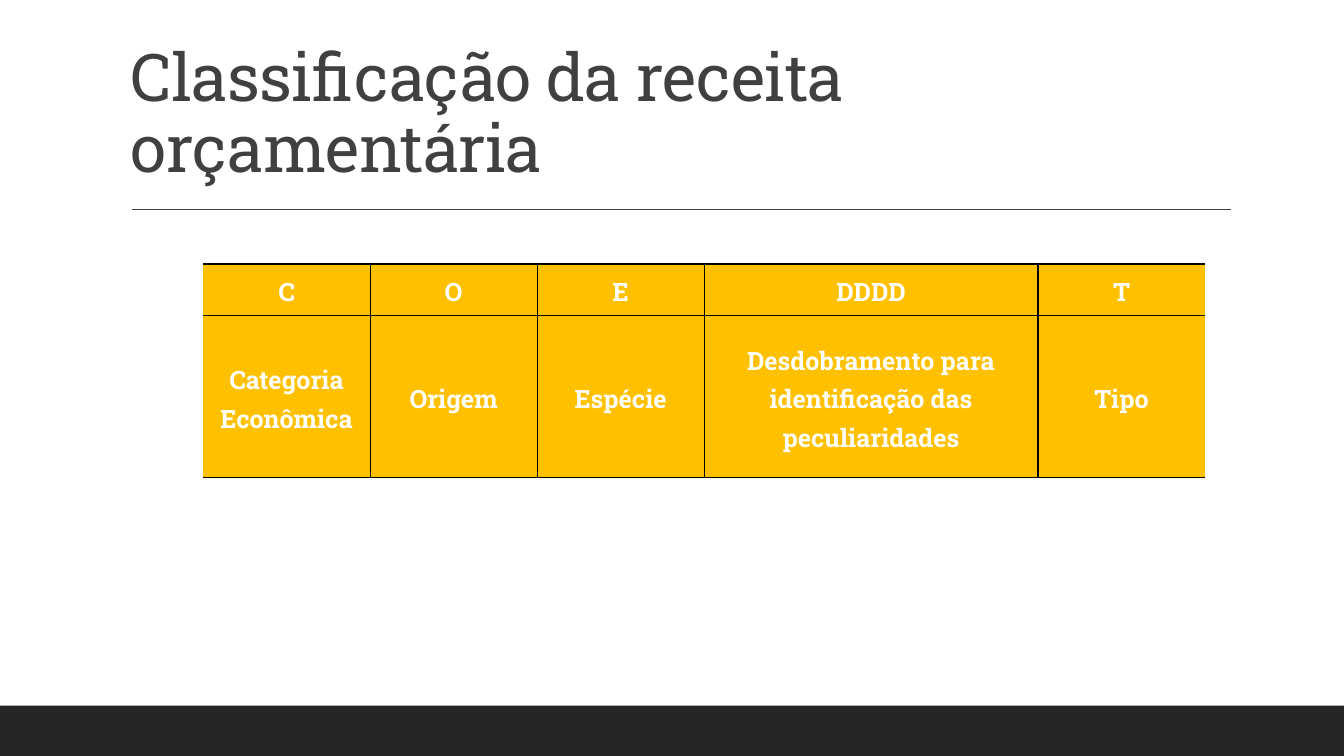
from dataclasses import dataclass

from lxml.etree import SubElement
from pptx import Presentation
from pptx.dml.color import RGBColor
from pptx.enum.shapes import MSO_CONNECTOR, MSO_SHAPE
from pptx.enum.text import MSO_ANCHOR, PP_ALIGN
from pptx.oxml.ns import qn
from pptx.util import Cm, Pt


@dataclass(frozen=True)
class Theme:
    font: str = "Roboto Slab"
    title_color: str = "404040"
    footer_color: str = "262626"
    cell_fill: str = "FFC000"
    cell_text: str = "FFFFFF"
    border: str = "000000"
    title_size: int = 47
    cell_size: int = 18


THEME = Theme()
SLIDE_WIDTH, SLIDE_HEIGHT = 33.87, 19.05

# Code letter, meaning and relative column width
REVENUE_CODES = [
    ("C", "Categoria Econômica", 1),
    ("O", "Origem", 1),
    ("E", "Espécie", 1),
    ("DDDD", "Desdobramento para identificação das peculiaridades", 2),
    ("T", "Tipo", 1),
]


def write_text(frame, text, *, size, color, bold=False, align=PP_ALIGN.LEFT,
               line_spacing=1.0, space_after=0, tracking=0):
    frame.word_wrap = True
    paragraph = frame.paragraphs[0]
    paragraph.alignment = align
    paragraph.line_spacing = line_spacing
    paragraph.space_after = Pt(space_after)
    run = paragraph.add_run()
    run.text = text
    run.font.name = THEME.font
    run.font.size = Pt(size)
    run.font.bold = bold
    run.font.color.rgb = RGBColor.from_string(color)
    if tracking:
        run.font._element.set("spc", str(round(tracking * 100)))


def set_borders(cell, visible_sides):
    """Draw the visible sides of a cell and switch off the others."""
    properties = cell._tc.get_or_add_tcPr()
    for side in "LRTB":
        line = SubElement(properties, qn(f"a:ln{side}"), w=str(Pt(1)))
        if side in visible_sides:
            fill = SubElement(line, qn("a:solidFill"))
            SubElement(fill, qn("a:srgbClr"), val=THEME.border)
        else:
            SubElement(line, qn("a:noFill"))


def add_footer_bar(slide, left, top, width, height):
    bar = slide.shapes.add_shape(
        MSO_SHAPE.RECTANGLE, Cm(left), Cm(top), Cm(width), Cm(height))
    bar.shadow.inherit = False
    bar.fill.solid()
    bar.fill.fore_color.rgb = RGBColor.from_string(THEME.footer_color)
    bar.line.fill.background()


def add_title(slide, text, left, top, width, height):
    # Rule below the title
    rule_left, rule_top = left + 0.28, top + height + 0.45
    rule = slide.shapes.add_connector(
        MSO_CONNECTOR.STRAIGHT, Cm(rule_left), Cm(rule_top),
        Cm(rule_left + width - 0.25), Cm(rule_top))
    rule.line.color.rgb = RGBColor.from_string(THEME.title_color)
    rule.line.width = Pt(1)
    SubElement(rule._element.spPr, qn("a:effectLst"))

    # Heading, resting on the bottom of its box
    box = slide.shapes.add_textbox(Cm(left), Cm(top), Cm(width), Cm(height))
    box.text_frame.vertical_anchor = MSO_ANCHOR.BOTTOM
    write_text(box.text_frame, text, size=THEME.title_size,
               color=THEME.title_color, line_spacing=0.9, tracking=-0.5)


def add_code_table(slide, codes, left, top, width, row_heights):
    table = slide.shapes.add_table(
        len(row_heights), len(codes), Cm(left), Cm(top),
        Cm(width), Cm(sum(row_heights))).table
    table.first_row = False
    table.horz_banding = False
    for row, height in zip(table.rows, row_heights):
        row.height = Cm(height)

    share = width / sum(weight for _, _, weight in codes)
    last = len(codes) - 1
    for column, (letter, meaning, weight) in enumerate(codes):
        table.columns[column].width = Cm(share * weight)
        # The outer left and right edges stay open
        sides = "TB" + ("L" if column > 0 else "") + ("R" if column < last else "")
        for row, text in enumerate((letter, meaning)):
            cell = table.cell(row, column)
            set_borders(cell, sides)
            cell.fill.solid()
            cell.fill.fore_color.rgb = RGBColor.from_string(THEME.cell_fill)
            cell.vertical_anchor = MSO_ANCHOR.MIDDLE
            cell.margin_left = cell.margin_right = Cm(0.18)
            cell.margin_top = cell.margin_bottom = Cm(0)
            write_text(cell.text_frame, text, size=THEME.cell_size,
                       color=THEME.cell_text, bold=True, align=PP_ALIGN.CENTER,
                       line_spacing=1.15, space_after=10)


def main():
    presentation = Presentation()
    presentation.slide_width = Cm(SLIDE_WIDTH)
    presentation.slide_height = Cm(SLIDE_HEIGHT)
    slide = presentation.slides.add_slide(presentation.slide_layouts[6])

    add_footer_bar(slide, 0, SLIDE_HEIGHT - 1.27, SLIDE_WIDTH, 1.27)
    add_title(slide, "Classificação da receita orçamentária",
              3.05, 0.79, 27.94, 4.04)
    add_code_table(slide, REVENUE_CODES, 5.12, 6.65, 25.25, (1.3, 4.09))

    presentation.save("out.pptx")


if __name__ == "__main__":
    main()
